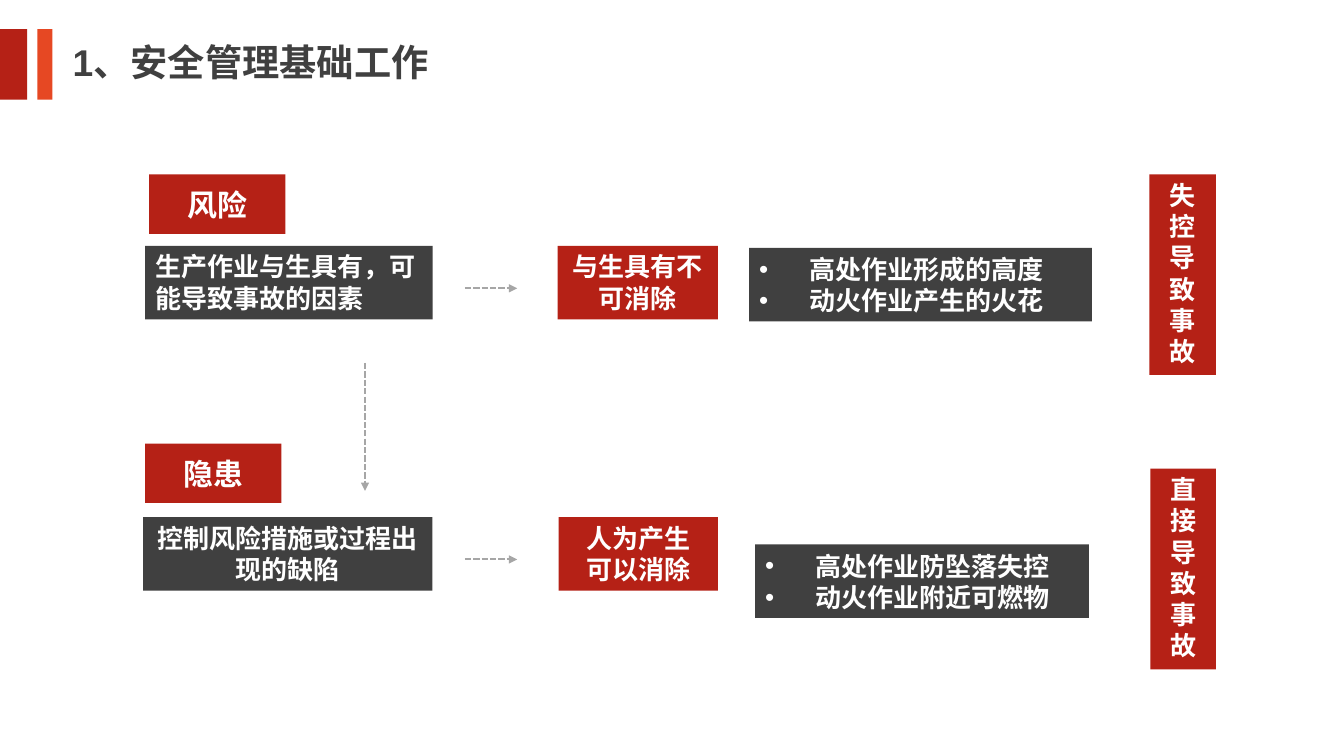
import pptx
import pptx.dml.color
import pptx.enum.shapes
import pptx.enum.text
import pptx.oxml.ns
import pptx.util
from lxml import etree

Inches = pptx.util.Inches
Align = pptx.enum.text.PP_ALIGN
Anchor = pptx.enum.text.MSO_ANCHOR

RED, ORANGE, DARK = "B52116", "E64823", "404040"
WHITE, GREY = "FFFFFF", "A6A6A6"


def color(value):
    return pptx.dml.color.RGBColor.from_string(value)


def add_xml(parent, tag, **attributes):
    return etree.SubElement(parent, pptx.oxml.ns.qn(tag), attributes)


class SafetySlide:
    font = "Arial"
    body_size = 18.6
    label_size = 21.4
    title_size = 26.6

    def __init__(self, deck):
        self.page = deck.slides.add_slide(deck.slide_layouts[5])

    def set_text(self, frame, text, size, ink, align, anchor):
        frame.text = text
        frame.word_wrap = True
        frame.auto_size = pptx.enum.text.MSO_AUTO_SIZE.NONE
        frame.vertical_anchor = anchor
        for para in frame.paragraphs:
            para.alignment = align
            for span in para.runs:
                span.font.name = self.font
                span.font.size = pptx.util.Pt(size)
                span.font.bold = True
                span.font.color.rgb = color(ink)

    def title(self, text, left, top, width, height):
        box = self.page.shapes.title
        box.left, box.top = Inches(left), Inches(top)
        box.width, box.height = Inches(width), Inches(height)
        self.set_text(box.text_frame, text, self.title_size, DARK, Align.LEFT, Anchor.TOP)

    def block(self, left, top, width, height, fill):
        box = self.page.shapes.add_shape(
            pptx.enum.shapes.MSO_SHAPE.RECTANGLE,
            Inches(left), Inches(top), Inches(width), Inches(height))
        box.shadow.inherit = False
        box.fill.solid()
        box.fill.fore_color.rgb = color(fill)
        box.line.fill.background()
        return box

    def text_block(self, text, place, fill, align=Align.CENTER, anchor=Anchor.TOP, size=body_size):
        box = self.block(*place, fill)
        self.set_text(box.text_frame, text, size, WHITE, align, anchor)
        return box

    def label(self, text, left, top):
        self.text_block(text, (left, top, 1.35, 0.59), RED,
                        anchor=Anchor.MIDDLE, size=self.label_size)

    def bullets(self, text, place, anchor):
        box = self.text_block(text, place, DARK, Align.LEFT, anchor)
        indent = Inches(0.5)
        for para in box.text_frame.paragraphs:
            properties = para._p.get_or_add_pPr()
            properties.set("marL", str(indent))
            properties.set("indent", str(-indent))
            add_xml(properties, "a:buFont", typeface=self.font)
            add_xml(properties, "a:buChar", char="•")

    def arrow(self, start, end):
        connector = self.page.shapes.add_connector(
            pptx.enum.shapes.MSO_CONNECTOR.STRAIGHT, *map(Inches, start + end))
        connector.line.color.rgb = color(GREY)
        connector.line.width = pptx.util.Pt(1.5)
        properties = connector._element.spPr
        line = properties.find(pptx.oxml.ns.qn("a:ln"))
        add_xml(line, "a:prstDash", val="sysDash")
        add_xml(line, "a:tailEnd", type="triangle")
        add_xml(properties, "a:effectLst")


def main():
    deck = pptx.Presentation()
    deck.slide_width, deck.slide_height = Inches(13.33), Inches(7.5)
    slide = SafetySlide(deck)

    slide.block(0, 0.29, 0.27, 0.7, RED)
    slide.block(0.37, 0.29, 0.15, 0.7, ORANGE)
    slide.title("1、安全管理基础工作", 0.62, 0.34, 3.79, 0.55)

    slide.label("风险", 1.48, 1.73)
    slide.text_block("生产作业与生具有，可能导致事故的因素", (1.44, 2.44, 2.85, 0.73), DARK, Align.LEFT)
    slide.text_block("与生具有不可消除", (5.53, 2.44, 1.59, 0.73), RED)
    slide.bullets("高处作业形成的高度\n动火作业产生的火花", (7.43, 2.46, 3.4, 0.73), Anchor.MIDDLE)
    slide.text_block("失控导致事故", (11.4, 1.73, 0.66, 1.99), RED)

    slide.label("隐患", 1.44, 4.4)
    slide.text_block("控制风险措施或过程出现的缺陷", (1.42, 5.13, 2.87, 0.73), DARK)
    slide.text_block("人为产生\n可以消除", (5.54, 5.13, 1.58, 0.73), RED)
    slide.bullets("高处作业防坠落失控\n动火作业附近可燃物", (7.49, 5.4, 3.31, 0.73), Anchor.BOTTOM)
    slide.text_block("直接导致事故", (11.41, 4.65, 0.65, 1.99), RED)

    slide.arrow((3.62, 3.6), (3.62, 4.87))
    for height in (2.86, 5.55):
        slide.arrow((4.61, height), (5.13, height))

    deck.save("out.pptx")


if __name__ == "__main__":
    main()
